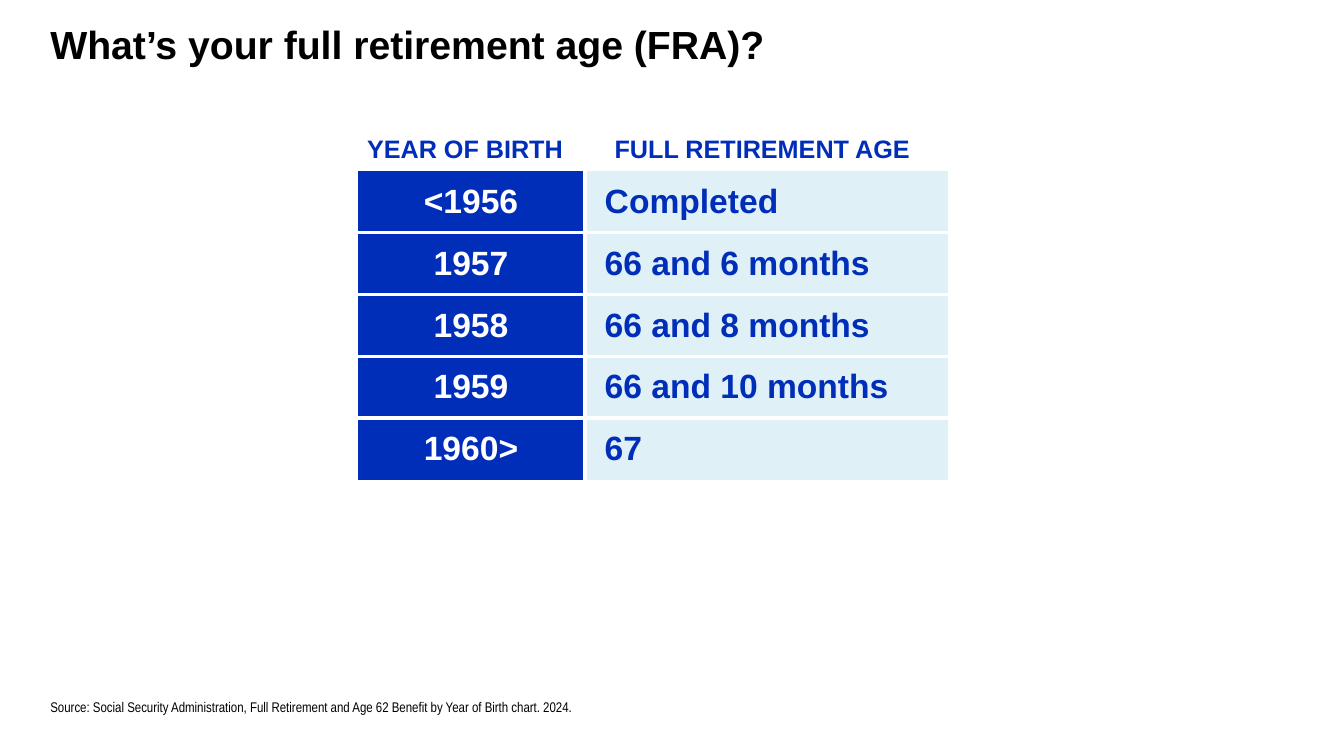
from lxml import etree
from pptx import Presentation
from pptx.dml.color import RGBColor
from pptx.enum import text
from pptx.oxml import ns
from pptx.util import Cm, Pt

BLUE = RGBColor(0x00, 0x2E, 0xB8)
PALE_BLUE = RGBColor(0xDF, 0xF0, 0xF7)
WHITE = RGBColor(0xFF, 0xFF, 0xFF)
BLACK = RGBColor(0x00, 0x00, 0x00)

RETIREMENT_AGES = [
    ("<1956", "Completed"),
    ("1957", "66 and 6 months"),
    ("1958", "66 and 8 months"),
    ("1959", "66 and 10 months"),
    ("1960>", "67"),
]
TABLE_LEFT, TABLE_TOP = 9, 4.3
YEAR_WIDTH, AGE_WIDTH, ROW_HEIGHT = 5.74, 9.2, 1.56


def add_run(paragraph, words, size, color, font="Arial", bold=True):
    run = paragraph.add_run()
    run.text = words
    run.font.name = font
    run.font.size = Pt(size)
    run.font.bold = bold
    run.font.color.rgb = color


def add_label(slide, left, top, width, height, words, size, color,
              margins=True, wrap=True, anchor=text.MSO_ANCHOR.TOP, **style):
    label = slide.shapes.add_textbox(Cm(left), Cm(top), Cm(width), Cm(height))
    frame = label.text_frame
    frame.word_wrap = wrap
    frame.vertical_anchor = anchor
    if not margins:
        frame.margin_left = frame.margin_right = 0
        frame.margin_top = frame.margin_bottom = 0
    add_run(frame.paragraphs[0], words, size, color, **style)


def set_borders(cell, widths):
    """Draw white borders; widths are points for left, right, top, bottom."""
    properties = cell._tc.get_or_add_tcPr()
    for position, (side, width) in enumerate(zip("LRTB", widths)):
        border = etree.Element(ns.qn(f"a:ln{side}"), w=str(Pt(width)))
        fill = etree.SubElement(border, ns.qn("a:solidFill"))
        etree.SubElement(fill, ns.qn("a:srgbClr"), val=str(WHITE))
        properties.insert(position, border)


def fill_cell(cell, words, fill, color, align):
    cell.fill.solid()
    cell.fill.fore_color.rgb = fill
    cell.vertical_anchor = text.MSO_ANCHOR.MIDDLE
    paragraph = cell.text_frame.paragraphs[0]
    paragraph.alignment = align
    add_run(paragraph, words, 24, color)


def add_age_table(slide):
    rows = len(RETIREMENT_AGES)
    ages = slide.shapes.add_table(
        rows, 2, Cm(TABLE_LEFT), Cm(TABLE_TOP),
        Cm(YEAR_WIDTH + AGE_WIDTH), Cm(ROW_HEIGHT * rows)).table
    ages.columns[0].width = Cm(YEAR_WIDTH)
    ages.columns[1].width = Cm(AGE_WIDTH)
    for index, (year, age) in enumerate(RETIREMENT_AGES):
        ages.rows[index].height = Cm(ROW_HEIGHT)
        year_cell, age_cell = ages.cell(index, 0), ages.cell(index, 1)
        fill_cell(year_cell, year, BLUE, WHITE, text.PP_ALIGN.CENTER)
        fill_cell(age_cell, age, PALE_BLUE, BLUE, text.PP_ALIGN.LEFT)
        age_cell.margin_left = Cm(0.5)
        # Thin lines on the outer edge, thick ones between rows
        top = 1 if index == 0 else 3
        bottom = 1 if index == rows - 1 else 3
        set_borders(year_cell, (1, 3, top, bottom))
        set_borders(age_cell, (3, 3, top, bottom))


def main():
    deck = Presentation()
    deck.slide_width, deck.slide_height = Cm(33.87), Cm(19.05)
    slide = deck.slides.add_slide(deck.slide_layouts[6])

    # Title
    add_label(slide, 1.27, 0.5, 24.13, 2.16,
              "What’s your full retirement age (FRA)?", 28, BLACK, margins=False)

    # Table with its column headings
    add_age_table(slide)
    add_label(slide, 9, 3.23, 5.5, 1.02, "YEAR OF BIRTH", 18, BLUE, wrap=False)
    add_label(slide, 15.24, 3.23, 8.2, 1.02, "FULL RETIREMENT AGE", 18, BLUE, wrap=False)

    # Source line
    add_label(slide, 1.27, 17.6, 31.32, 0.43,
              "Source: Social Security Administration, Full Retirement and Age 62 "
              "Benefit by Year of Birth chart. 2024.",
              10, BLACK, margins=False, anchor=text.MSO_ANCHOR.BOTTOM,
              font="Arial Narrow", bold=False)

    deck.save("out.pptx")


if __name__ == "__main__":
    main()
